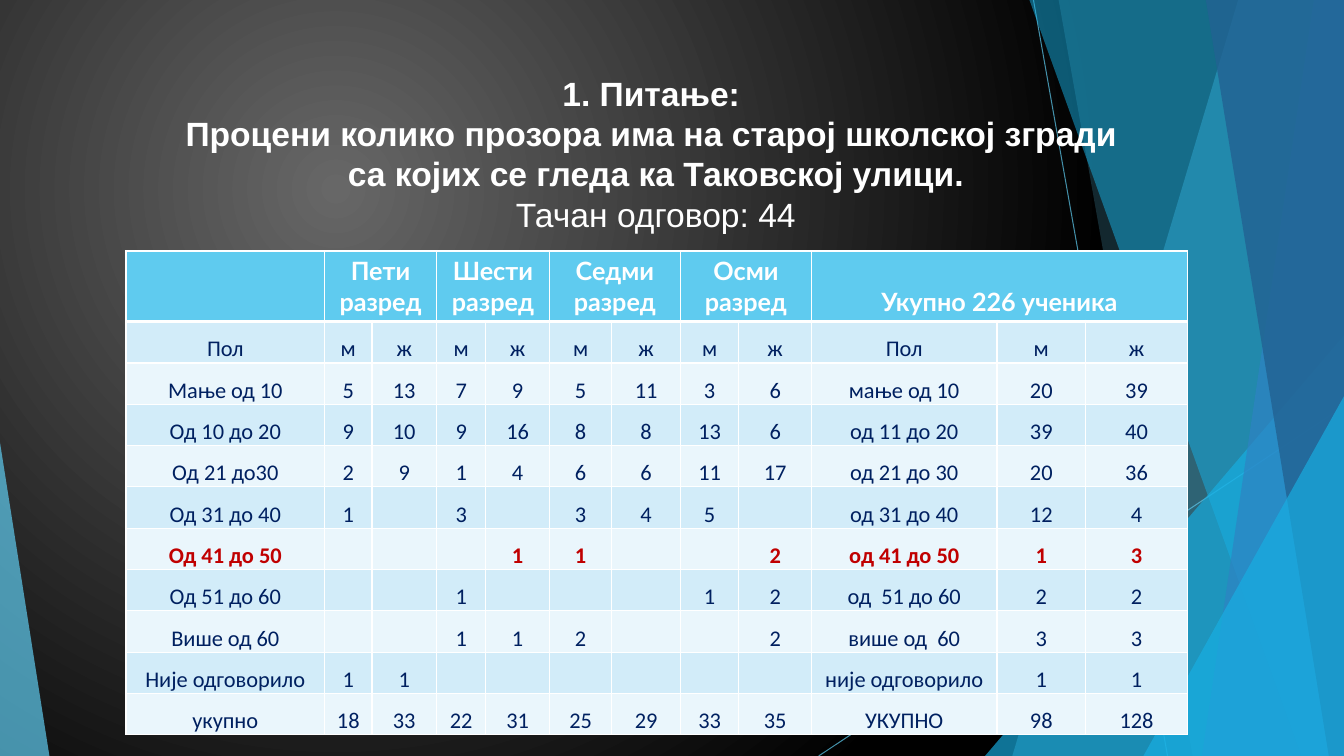
import pptx
import pptx.dml.color
import pptx.enum.shapes
import pptx.enum.text
import pptx.oxml
import pptx.oxml.ns
import pptx.util
from pptx.util import Inches

SLIDE_WIDTH, SLIDE_HEIGHT = 13.33, 7.5
WHITE, SKY, AZURE, NAVY, RED = "FFFFFF", "5FCBEF", "17B0E4", "002060", "C00000"
ROW_FILLS = ["D2ECF9", "EAF6FC"]
HIGHLIGHTED_ROW = 6

TITLE_LINES = [
    "1. Питање: ",
    "Процени колико прозора има на старој школској згради ",
    "са којих се гледа ка Таковској улици.",
    "Тачан одговор: 44",
]
COLUMN_WIDTHS = [1.97, 0.47, 0.64, 0.49, 0.63, 0.62, 0.68, 0.58, 0.72, 1.84, 0.88, 1.01]
# First column, last column, text
HEADERS = [
    (0, 0, ""),
    (1, 2, "Пети разред"),
    (3, 4, "Шести разред"),
    (5, 6, "Седми разред"),
    (7, 8, "Осми разред"),
    (9, 11, "Укупно 226 ученика"),
]
ROWS = [
    ["Пол", "м", "ж", "м", "ж", "м", "ж", "м", "ж", "Пол", "м", "ж"],
    ["Мање од 10", 5, 13, 7, 9, 5, 11, 3, 6, "мање од 10", 20, 39],
    ["Од 10 до 20", 9, 10, 9, 16, 8, 8, 13, 6, "од 11 до 20", 39, 40],
    ["Од 21 до30", 2, 9, 1, 4, 6, 6, 11, 17, "од 21 до 30", 20, 36],
    ["Од 31 до 40", 1, "", 3, "", 3, 4, 5, "", "од 31 до 40", 12, 4],
    ["Од 41 до 50", "", "", "", 1, 1, "", "", 2, "од 41 до 50", 1, 3],
    ["Од 51 до 60", "", "", 1, "", "", "", 1, 2, "од  51 до 60", 2, 2],
    ["Више од 60", "", "", 1, 1, 2, "", "", 2, "више од  60", 3, 3],
    ["Није одговорило", 1, 1, "", "", "", "", "", "", "није одговорило", 1, 1],
    ["укупно", 18, 33, 22, 31, 25, 29, 33, 35, "УКУПНО", 98, 128],
]


def rgb(color):
    return pptx.dml.color.RGBColor.from_string(color)


def add_element(parent, tag, **attributes):
    element = pptx.oxml.ns.qn(tag)
    child = parent.makeelement(element, attributes)
    parent.append(child)
    return child


def paint(fill, color):
    fill.solid()
    fill.fore_color.rgb = rgb(color)


def set_opacity(shape, percent):
    for color in shape.element.spPr.iter(pptx.oxml.ns.qn("a:srgbClr")):
        add_element(color, "a:alpha", val=str(percent * 1000))


def set_background(slide, center_color, edge_color):
    fill = slide.background.fill
    fill.gradient()
    for stop, color in zip(fill.gradient_stops, (center_color, edge_color)):
        stop.color.rgb = rgb(color)
    gradient = slide.element.find(".//" + pptx.oxml.ns.qn("a:gradFill"))
    gradient.remove(gradient.find(pptx.oxml.ns.qn("a:lin")))
    circle = add_element(gradient, "a:path", path="circle")
    add_element(circle, "a:fillToRect", l="50000", t="50000", r="100000", b="100000")


def add_line(slide, start_x, start_y, end_x, end_y):
    line = slide.shapes.add_connector(
        pptx.enum.shapes.MSO_CONNECTOR.STRAIGHT,
        Inches(start_x), Inches(start_y), Inches(end_x), Inches(end_y))
    line.line.color.rgb = rgb(SKY)
    line.line.width = pptx.util.Pt(0.75)
    set_opacity(line, 70)
    add_element(line.element.spPr, "a:effectLst")


def finish_facet(shape, color, opacity):
    shape.shadow.inherit = False
    paint(shape.fill, color)
    shape.line.fill.background()
    set_opacity(shape, opacity)


def add_band(slide, top_x, bottom_x, color, opacity):
    """Fill the slide from a slanted left edge to its right side."""
    corners = [(SLIDE_WIDTH, 0), (SLIDE_WIDTH, SLIDE_HEIGHT), (bottom_x, SLIDE_HEIGHT)]
    builder = slide.shapes.build_freeform(Inches(top_x), 0)
    builder.add_line_segments([(Inches(x), Inches(y)) for x, y in corners], close=True)
    finish_facet(builder.convert_to_shape(), color, opacity)


def add_triangle(slide, left, top, width, apex, color, opacity):
    """Stand a right triangle on the slide's bottom edge; apex is 0 (left) or 1 (right)."""
    triangle = slide.shapes.add_shape(
        pptx.enum.shapes.MSO_SHAPE.ISOSCELES_TRIANGLE,
        Inches(left), Inches(top), Inches(width), Inches(SLIDE_HEIGHT - top))
    triangle.adjustments[0] = apex
    finish_facet(triangle, color, opacity)


def write(paragraph, text, *, size, font, color, bold=False):
    paragraph.alignment = pptx.enum.text.PP_ALIGN.CENTER
    run = paragraph.add_run()
    run.text = str(text)
    run.font.size = pptx.util.Pt(size)
    run.font.name = font
    run.font.color.rgb = rgb(color)
    run.font.bold = bold


def add_title(slide):
    box = slide.shapes.add_textbox(Inches(0.74), Inches(0.67), Inches(11.53), Inches(1.44))
    box.text_frame.word_wrap = True
    paragraph = box.text_frame.paragraphs[0]
    for index, line in enumerate(TITLE_LINES):
        if index:
            paragraph.add_line_break()
        write(paragraph, line, size=24, font="Arial", color=WHITE,
              bold=line != TITLE_LINES[-1])


def format_cell(cell, color, top=1, bottom=1):
    """Set the fill and the white borders, with top and bottom widths in points."""
    properties = cell._tc.get_or_add_tcPr()
    for side, width in (("L", 1), ("R", 1), ("T", top), ("B", bottom)):
        border = add_element(properties, "a:ln" + side, w=str(pptx.util.Pt(width)))
        add_element(add_element(border, "a:solidFill"), "a:srgbClr", val=WHITE)
    paint(cell.fill, color)
    cell.vertical_anchor = pptx.enum.text.MSO_ANCHOR.BOTTOM


def fill_header(table):
    for column in range(len(COLUMN_WIDTHS)):
        format_cell(table.cell(0, column), SKY, bottom=3)
    for first, last, text in HEADERS:
        cell = table.cell(0, first)
        if last > first:
            cell.merge(table.cell(0, last))
        if text:
            write(cell.text_frame.paragraphs[0], text, size=18, font="Lato",
                  color=WHITE, bold=True)


def fill_body(table):
    for row, values in enumerate(ROWS, start=1):
        highlighted = row == HIGHLIGHTED_ROW
        for column, value in enumerate(values):
            cell = table.cell(row, column)
            format_cell(cell, ROW_FILLS[(row - 1) % 2], top=3 if row == 1 else 1)
            if value == "":
                continue
            cell.margin_left = cell.margin_right = cell.margin_top = Inches(0.01)
            cell.margin_bottom = 0
            write(cell.text_frame.paragraphs[0], value, size=16, font="Calibri",
                  color=RED if highlighted else NAVY, bold=highlighted)


def add_answer_table(slide):
    table = slide.shapes.add_table(
        len(ROWS) + 1, len(COLUMN_WIDTHS),
        Inches(1.25), Inches(2.49), Inches(10.53), Inches(4.76)).table
    for column, width in zip(table.columns, COLUMN_WIDTHS):
        column.width = Inches(width)
    for index, row in enumerate(table.rows):
        row.height = Inches(0.41 if index else 0.7)
    fill_header(table)
    fill_body(table)


def main():
    presentation = pptx.Presentation()
    presentation.slide_width = Inches(SLIDE_WIDTH)
    presentation.slide_height = Inches(SLIDE_HEIGHT)
    slide = presentation.slides.add_slide(presentation.slide_layouts[6])
    set_background(slide, "676767", "000000")
    add_line(slide, 10.25, 0, 11.58, SLIDE_HEIGHT)
    add_line(slide, SLIDE_WIDTH, 4.03, 8.12, SLIDE_HEIGHT)
    add_band(slide, 12.28, 10.04, SKY, 36)
    add_band(slide, 10.5, 11.83, SKY, 20)
    add_triangle(slide, 9.77, 3.33, 3.56, 1, AZURE, 66)
    add_band(slide, 10.21, 12.91, AZURE, 50)
    add_band(slide, 13.03, 11.92, "2E83C3", 70)
    add_band(slide, 11.96, 13.18, "226292", 80)
    add_triangle(slide, 11.34, 3.93, 1.99, 1, AZURE, 66)
    add_triangle(slide, 0, 4.39, 0.49, 0, SKY, 70)
    add_title(slide)
    add_answer_table(slide)
    presentation.save("out.pptx")


if __name__ == "__main__":
    main()
